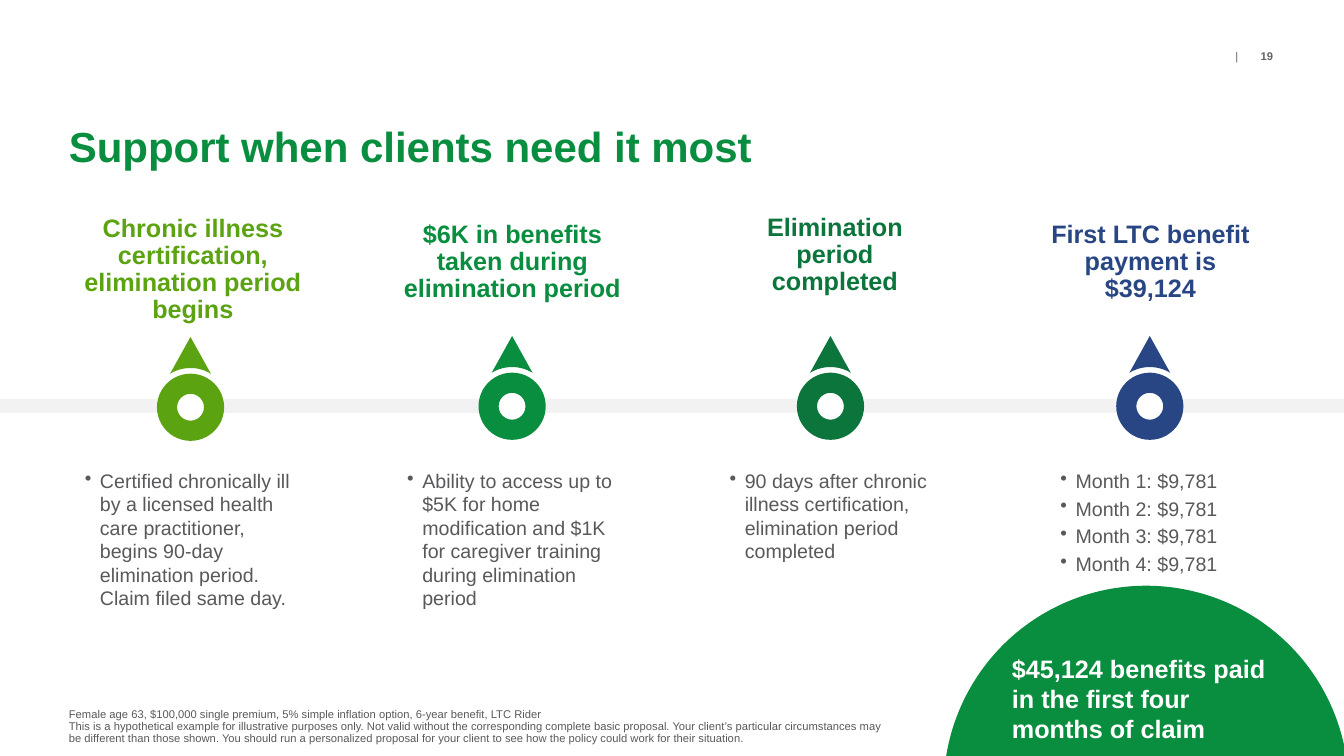
from dataclasses import dataclass
from math import asin, cos, sin

from lxml.etree import SubElement
from pptx import Presentation
from pptx.dml.color import RGBColor
from pptx.enum.shapes import MSO_SHAPE
from pptx.enum.text import MSO_ANCHOR, PP_ALIGN
from pptx.oxml.ns import qn
from pptx.util import Pt


@dataclass(frozen=True)
class Theme:
    font: str = "Arial"
    lime: str = "5CA311"
    green: str = "098D3E"
    forest: str = "0B753C"
    navy: str = "284684"
    text: str = "58595B"
    muted: str = "636466"
    band: str = "F2F2F2"
    white: str = "FFFFFF"
    title: int = 30
    heading: int = 18
    body: int = 14
    small: int = 8


@dataclass(frozen=True)
class Box:
    left: float
    top: float
    width: float
    height: float

    def lengths(self) -> tuple:
        return Pt(self.left), Pt(self.top), Pt(self.width), Pt(self.height)


@dataclass(frozen=True)
class Milestone:
    heading: str
    heading_box: Box
    color: str
    pin_x: float
    pin_y: float
    bullets: tuple[str, ...]
    bullets_left: float


THEME = Theme()
BULLETS_TOP, BULLETS_WIDTH, BULLETS_HEIGHT = 334.8, 153.4, 130
INDENT = 10.8
RING, HOLE_BACK = 48, 29.6
POINTER_HEIGHT, POINTER_HALF, ARC_RADIUS = 50.2, 14.6, 28

MILESTONES = (
    Milestone("Chronic illness certification, elimination period begins",
              Box(51.8, 153.4, 172, 81.7), THEME.lime, 136.1, 290.9,
              ("Certified chronically ill by a licensed health care practitioner, "
               "begins 90-day elimination period. Claim filed same day.",), 60.6),
    Milestone("$6K in benefits taken during elimination period",
              Box(280, 153.4, 172, 66.6), THEME.green, 365.8, 290.2,
              ("Ability to access up to $5K for home modification and $1K for "
               "caregiver training during elimination period",), 290.9),
    Milestone("Elimination period completed",
              Box(521.2, 148.3, 150.4, 66.8), THEME.forest, 593.2, 290.2,
              ("90 days after chronic illness certification, "
               "elimination period completed",), 521.2),
    Milestone("First LTC benefit payment is $39,124",
              Box(735.8, 153.4, 172, 66.6), THEME.navy, 821.3, 290.2,
              tuple(f"Month {month}: $9,781" for month in range(1, 5)), 757.5),
)


def add_text(shapes, box: Box, paragraphs: tuple[str, ...], size: int, color: str,
             bold: bool = False, bullet: bool = False, inset: tuple = (0, 0),
             anchor=MSO_ANCHOR.TOP, **paragraph_format):
    tf = shapes.add_textbox(*box.lengths()).text_frame
    side, end = map(Pt, inset)
    frame_format = dict(word_wrap=True, vertical_anchor=anchor, margin_left=side,
                        margin_right=side, margin_top=end, margin_bottom=end)
    for name, value in frame_format.items():
        setattr(tf, name, value)
    for i, text in enumerate(paragraphs):
        p = tf.paragraphs[0] if i == 0 else tf.add_paragraph()
        for name, value in paragraph_format.items():
            if name != "space_before" or i > 0:
                setattr(p, name, value)
        if bullet:
            pPr = p._p.get_or_add_pPr()
            pPr.set("marL", str(Pt(INDENT)))
            pPr.set("indent", str(-Pt(INDENT)))
            SubElement(pPr, qn("a:buChar"), char="•")
        r = p.add_run()
        r.text = text
        style_run(r, size, color, bold)
    return tf


def style_run(r, size: int, color: str, bold: bool) -> None:
    for name, value in dict(name=THEME.font, size=Pt(size), bold=bold).items():
        setattr(r.font, name, value)
    r.font.color.rgb = RGBColor.from_string(color)


def paint(sp, color: str) -> None:
    sp.shadow.inherit = False
    sp.fill.solid()
    sp.fill.fore_color.rgb = RGBColor.from_string(color)
    sp.line.fill.background()


def add_filled(shapes, kind: MSO_SHAPE, box: Box, color: str):
    sp = shapes.add_shape(kind, *box.lengths())
    paint(sp, color)
    return sp


def centred(x: float, y: float, size: float) -> Box:
    return Box(x - size / 2, y - size / 2, size, size)


def add_pin(shapes, x: float, y: float, color: str) -> None:
    """Draw a ring with a pointer above it, whose base follows the ring."""
    group = shapes.add_group_shape().shapes
    add_filled(group, MSO_SHAPE.OVAL, centred(x, y, HOLE_BACK), THEME.white)
    ring = add_filled(group, MSO_SHAPE.DONUT, centred(x, y, RING), color)
    ring.adjustments[0] = 0.3
    spread = asin(POINTER_HALF / ARC_RADIUS)
    angles = [spread * (1 - step / 10) for step in range(21)]
    arc = [(Pt(x + ARC_RADIUS * sin(a)), Pt(y - ARC_RADIUS * cos(a))) for a in angles]
    builder = group.build_freeform(Pt(x), Pt(y - POINTER_HEIGHT))
    builder.add_line_segments(arc, close=True)
    paint(builder.convert_to_shape(), color)


def add_milestone(shapes, m: Milestone) -> None:
    add_text(shapes, m.heading_box, (m.heading,), THEME.heading, m.color, bold=True,
             inset=(7.2, 3.6), anchor=MSO_ANCHOR.BOTTOM,
             alignment=PP_ALIGN.CENTER, line_spacing=0.9)
    add_pin(shapes, m.pin_x, m.pin_y, m.color)
    box = Box(m.bullets_left, BULLETS_TOP, BULLETS_WIDTH, BULLETS_HEIGHT)
    add_text(shapes, box, m.bullets, THEME.body, THEME.text, bullet=True,
             space_before=Pt(3))


def add_page_number(shapes, number: str) -> None:
    tf = add_text(shapes, Box(882.5, 35.5, 30, 11), ("|\t",), THEME.small, THEME.muted)
    p = tf.paragraphs[0]
    tabs = SubElement(p._p.get_or_add_pPr(), qn("a:tabLst"))
    SubElement(tabs, qn("a:tab"), pos=str(Pt(18)), algn="l")
    r = p.add_run()
    r.text = number
    style_run(r, THEME.small, THEME.muted, True)


def main() -> None:
    prs = Presentation()
    prs.slide_width, prs.slide_height = Pt(960), Pt(540)
    shapes = prs.slides.add_slide(prs.slide_layouts[6]).shapes

    add_page_number(shapes, "19")
    add_filled(shapes, MSO_SHAPE.RECTANGLE, Box(0, 285, 960, 10), THEME.band)
    add_text(shapes, Box(49.2, 91.2, 860, 52.6), ("Support when clients need it most",),
             THEME.title, THEME.green, bold=True, line_spacing=Pt(31))
    for m in MILESTONES:
        add_milestone(shapes, m)
    add_text(shapes, Box(49.2, 502.9, 586, 29.5), (
        "Female age 63, $100,000 single premium, 5% simple inflation option, "
        "6-year benefit, LTC Rider",
        "This is a hypothetical example for illustrative purposes only. Not valid without "
        "the corresponding complete basic proposal. Your client’s particular circumstances "
        "may be different than those shown. You should run a personalized proposal for "
        "your client to see how the policy could work for their situation.",
    ), THEME.small, THEME.text, anchor=MSO_ANCHOR.BOTTOM, line_spacing=0.9)
    add_filled(shapes, MSO_SHAPE.OVAL, Box(674, 418.4, 289.4, 289.4), THEME.green)
    add_text(shapes, Box(722.8, 466.6, 193, 70),
             ("$45,124 benefits paid in the first four months of claim",),
             THEME.heading, THEME.white, bold=True)
    prs.save("out.pptx")


if __name__ == "__main__":
    main()
